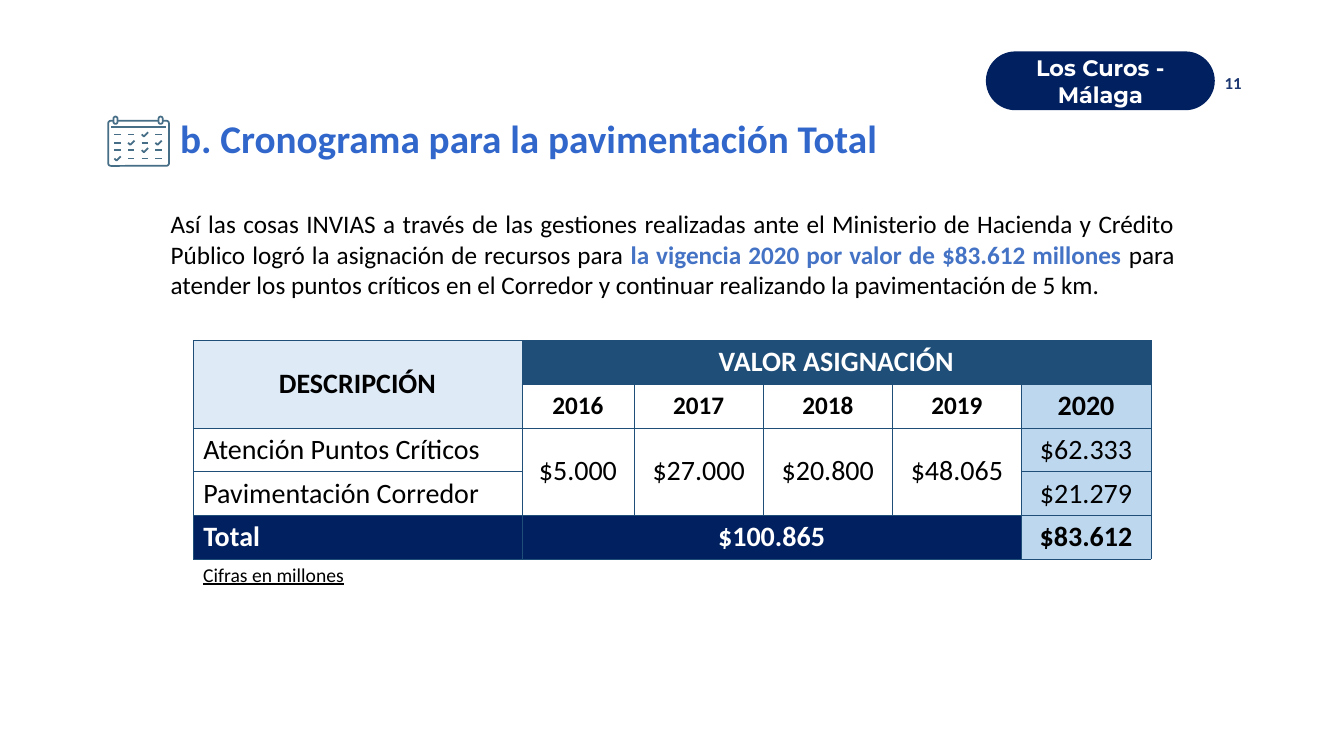
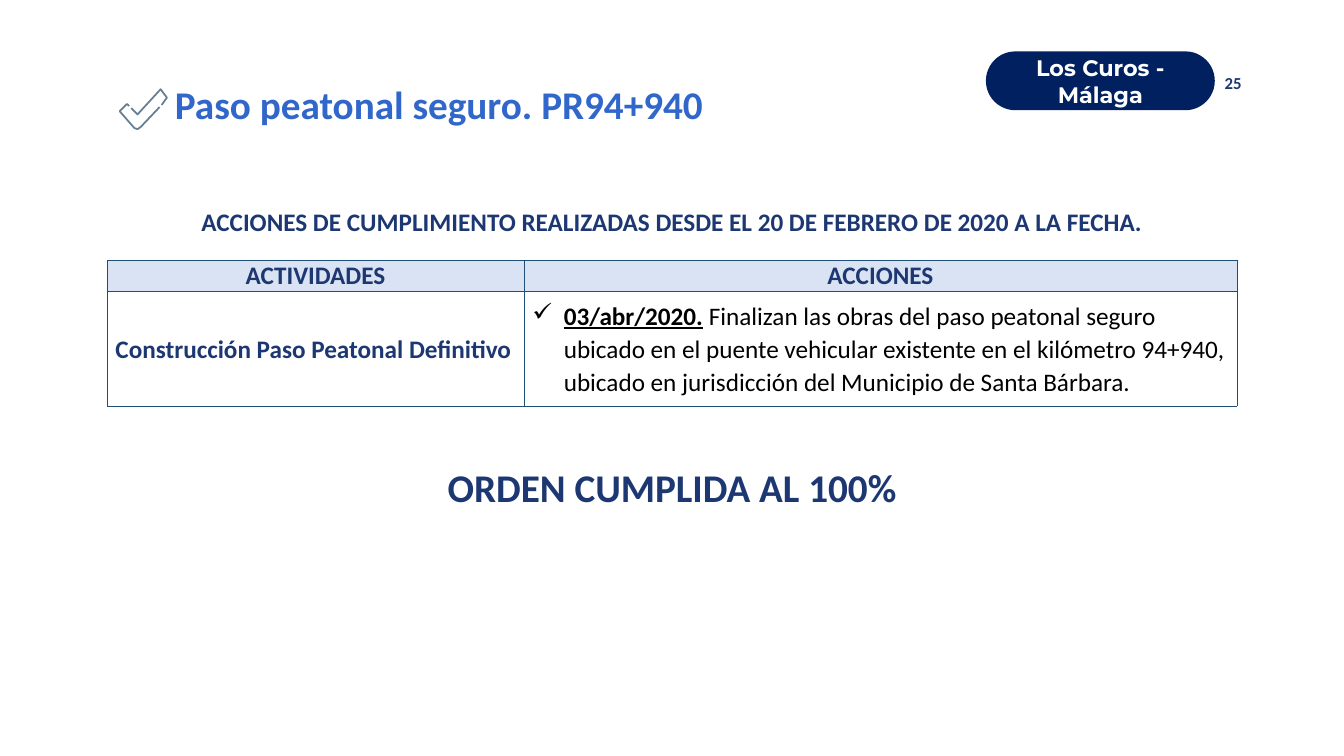
"""Build two road-project slides: the paving schedule and the safe crossing."""
from lxml.etree import SubElement
from pptx import Presentation
from pptx.dml.color import RGBColor
from pptx.enum.shapes import MSO_CONNECTOR, MSO_SHAPE
from pptx.enum.text import MSO_ANCHOR as ANCHOR, MSO_AUTO_SIZE as AUTOSIZE, PP_ALIGN as ALIGN
from pptx.oxml import parse_xml
from pptx.oxml.ns import nsdecls, qn
from pptx.util import Pt

PX = 9525
WHITE, BLACK = "FFFFFF", "000000"
NAVY, INK, TITLE_BLUE, ACCENT = "002060", "1C3771", "3166CB", "4472C4"
BORDER, PALE, SKY, LAVENDER = "1F4E79", "DEEBF7", "BDD7EE", "DAE3F3"
CALENDAR, CHECK = "476E87", "657E93"


def rgb(value):
    return RGBColor.from_string(value)


def write(frame, spans, size, align=ALIGN.LEFT, spacing=1.0, font="Calibri"):
    para = frame.paragraphs[0]
    para.alignment = align
    para.line_spacing = spacing
    for text, colour, bold, underline in spans:
        span = para.add_run()
        span.text = text
        span.font.name = font
        span.font.size = Pt(size)
        span.font.bold = bold
        span.font.underline = underline
        span.font.color.rgb = rgb(colour)


deck = Presentation()
deck.slide_width, deck.slide_height = 1280 * PX, 720 * PX

pages = []
for number, title, left, top, height, spacing in (
    ("11", "b. Cronograma para la pavimentación Total", 162, 101, 59, 1.07),
    ("25", "Paso peatonal seguro. PR94+940", 157, 80, 47, 0.8),
):
    page = deck.slides.add_slide(deck.slide_layouts[5])
    pages.append(page)

    heading = page.shapes.title
    heading.left, heading.top = left * PX, top * PX
    heading.width, heading.height = 852 * PX, height * PX
    heading.text_frame.auto_size = AUTOSIZE.NONE
    heading.text_frame.vertical_anchor = ANCHOR.TOP
    write(heading.text_frame, [(title, TITLE_BLUE, True, False)], 28, spacing=spacing)

    pill = page.shapes.add_shape(
        MSO_SHAPE.ROUNDED_RECTANGLE, 939 * PX, 49 * PX, 218 * PX, 56 * PX)
    pill.adjustments[0] = 0.5
    pill.shadow.inherit = False
    pill.fill.solid()
    pill.fill.fore_color.rgb = rgb(NAVY)
    pill.line.fill.background()
    pill.text_frame.vertical_anchor = ANCHOR.MIDDLE
    write(pill.text_frame, [("Los Curos - Málaga", WHITE, True, False)], 16,
          ALIGN.CENTER, font="Montserrat")

    page_number = page.shapes.add_textbox(904 * PX, 60 * PX, 288 * PX, 38 * PX)
    page_number.text_frame.word_wrap = True
    page_number.text_frame.vertical_anchor = ANCHOR.MIDDLE
    write(page_number.text_frame, [(number, INK, True, False)], 12, ALIGN.RIGHT)

schedule, crossing = pages

allocation = [
    ("Así las cosas INVIAS a través de las gestiones realizadas ante el Ministerio de Hacienda "
     "y Crédito Público logró la asignación de recursos para ", BLACK, False, False),
    ("la vigencia 2020 por valor de $83.612 millones ", ACCENT, True, False),
    ("para atender los puntos críticos en el Corredor y continuar realizando la pavimentación "
     "de 5 km.", BLACK, False, False),
]
units = [("Cifras en millones", BLACK, False, True)]
subtitle = [("ACCIONES DE CUMPLIMIENTO REALIZADAS DESDE EL 20 DE FEBRERO DE 2020 A LA FECHA.",
             INK, True, False)]
verdict = [("ORDEN CUMPLIDA AL 100%", INK, True, False)]

for page, left, top, width, height, spans, size, align, spacing in (
    (schedule, 153, 194, 975, 97, allocation, 18, ALIGN.JUSTIFY, 1.0),
    (schedule, 184, 531, 155, 33, units, 14, ALIGN.LEFT, 1.0),
    (crossing, 102, 190, 1076, 41, subtitle, 18, ALIGN.CENTER, 1.07),
    (crossing, 102, 433, 1076, 56, verdict, 28, ALIGN.CENTER, 1.07),
):
    box = page.shapes.add_textbox(left * PX, top * PX, width * PX, height * PX)
    box.text_frame.word_wrap = True
    write(box.text_frame, spans, size, align, spacing)

tables = []
for page, left, top, widths, heights in (
    (schedule, 184, 324, [313, 107] + [123] * 4, [41] * 5),
    (crossing, 102, 248, [397, 679], [29, 110]),
):
    table = page.shapes.add_table(
        len(heights), len(widths), left * PX, top * PX,
        sum(widths) * PX, sum(heights) * PX).table
    for column, width in zip(table.columns, widths):
        column.width = width * PX
    for row, height in zip(table.rows, heights):
        row.height = height * PX
    for cell in table.iter_cells():
        cell.vertical_anchor = ANCHOR.MIDDLE
        cell.fill.background()
        properties = cell._tc.get_or_add_tcPr()
        for position, side in enumerate(("lnL", "lnR", "lnT", "lnB")):
            properties.insert(position, parse_xml(
                f'<a:{side} {nsdecls("a")} w="3175"><a:solidFill>'
                f'<a:srgbClr val="{BORDER}"/></a:solidFill></a:{side}>'))
    tables.append(table)

budget, actions = tables

budget_cells = [
    (0, 0, 2, 1, "DESCRIPCIÓN", PALE, BLACK, True, 20),
    (0, 1, 1, 5, "VALOR ASIGNACIÓN", BORDER, WHITE, True, 20),
    (1, 5, 1, 1, "2020", SKY, BLACK, True, 20),
    (2, 0, 1, 1, "Atención Puntos Críticos", None, BLACK, False, 20),
    (3, 0, 1, 1, "Pavimentación Corredor", None, BLACK, False, 20),
    (2, 5, 1, 1, "$62.333", SKY, BLACK, False, 20),
    (3, 5, 1, 1, "$21.279", SKY, BLACK, False, 20),
    (4, 0, 1, 1, "Total", NAVY, WHITE, True, 20),
    (4, 1, 1, 4, "$100.865", NAVY, WHITE, True, 20),
    (4, 5, 1, 1, "$83.612", SKY, BLACK, True, 20),
]
past_years = (("2016", "$5.000"), ("2017", "$27.000"), ("2018", "$20.800"), ("2019", "$48.065"))
for column, (year, amount) in enumerate(past_years, 1):
    budget_cells.append((1, column, 1, 1, year, None, BLACK, True, 18))
    budget_cells.append((2, column, 2, 1, amount, None, BLACK, False, 20))

for row, column, tall, wide, text, fill, colour, bold, size in budget_cells:
    cell = budget.cell(row, column)
    if tall * wide > 1:
        cell.merge(budget.cell(row + tall - 1, column + wide - 1))
    if fill:
        cell.fill.solid()
        cell.fill.fore_color.rgb = rgb(fill)
    align = ALIGN.LEFT if column == 0 and row >= 2 else ALIGN.CENTER
    write(cell.text_frame, [(text, colour, bold, False)], size, align)

for column, text in enumerate(("ACTIVIDADES", "ACCIONES")):
    header, body = actions.cell(0, column), actions.cell(1, column)
    header.fill.solid()
    header.fill.fore_color.rgb = rgb(LAVENDER)
    write(header.text_frame, [(text, INK, True, False)], 18, ALIGN.CENTER)
    for cell, inset in ((header, 0), (body, 8)):
        cell.margin_left = cell.margin_right = inset * PX
        cell.margin_top = cell.margin_bottom = inset * PX

write(actions.cell(1, 0).text_frame,
      [("Construcción Paso Peatonal Definitivo", INK, True, False)], 18, spacing=1.07)

action = actions.cell(1, 1)
action.vertical_anchor = ANCHOR.TOP
write(action.text_frame, [
    ("03/abr/2020.", BLACK, True, True),
    (" Finalizan las obras del paso peatonal seguro ubicado en el puente vehicular existente en "
     "el kilómetro 94+940, ubicado en jurisdicción del Municipio de Santa Bárbara.",
     BLACK, False, False),
], 18, spacing=1.07)
bullet = action.text_frame.paragraphs[0]._p.get_or_add_pPr()
bullet.set("marL", str(30 * PX))
bullet.set("indent", str(-30 * PX))
SubElement(bullet, qn("a:buChar")).set("char", "✓")

for left, top, width, height, roundness in (
    (103, 115, 58, 43, 0.06), (108, 111, 4, 7, 0.5), (151, 111, 4, 7, 0.5),
):
    outline = schedule.shapes.add_shape(
        MSO_SHAPE.ROUNDED_RECTANGLE, left * PX, top * PX, width * PX, height * PX)
    outline.adjustments[0] = roundness
    outline.shadow.inherit = False
    outline.fill.solid()
    outline.fill.fore_color.rgb = rgb(WHITE)
    outline.line.color.rgb = rgb(CALENDAR)
    outline.line.width = Pt(1.25)

dashes = [(106, 121, 52)]
strokes = [
    (crossing, CHECK, [(123, 101), (121, 99), (114, 106), (128, 122), (131, 123),
                       (134, 121), (152, 102)]),
    (crossing, CHECK, [(125, 103), (131, 109), (153, 85), (159, 93), (154, 100)]),
]
for top, marks in zip((128, 136, 143, 151), ("--v-", "-v-v", "--v-", "v---")):
    for column, mark in enumerate(marks):
        left = 109 + 13 * column
        if mark == "-":
            dashes.append((left, top, 6))
        else:
            strokes.append((schedule, CALENDAR,
                            [(left, top), (left + 2, top + 2), (left + 6, top - 2)]))

for left, top, width in dashes:
    dash = schedule.shapes.add_connector(
        MSO_CONNECTOR.STRAIGHT, left * PX, top * PX, (left + width) * PX, top * PX)
    dash.line.color.rgb = rgb(CALENDAR)
    dash.line.width = Pt(1.25)
    SubElement(dash._element.spPr, qn("a:effectLst"))

for page, colour, points in strokes:
    builder = page.shapes.build_freeform(*points[0], scale=PX)
    builder.add_line_segments(points[1:], close=False)
    stroke = builder.convert_to_shape()
    stroke.shadow.inherit = False
    stroke.fill.background()
    stroke.line.color.rgb = rgb(colour)
    stroke.line.width = Pt(1.25)

deck.save("out.pptx")
